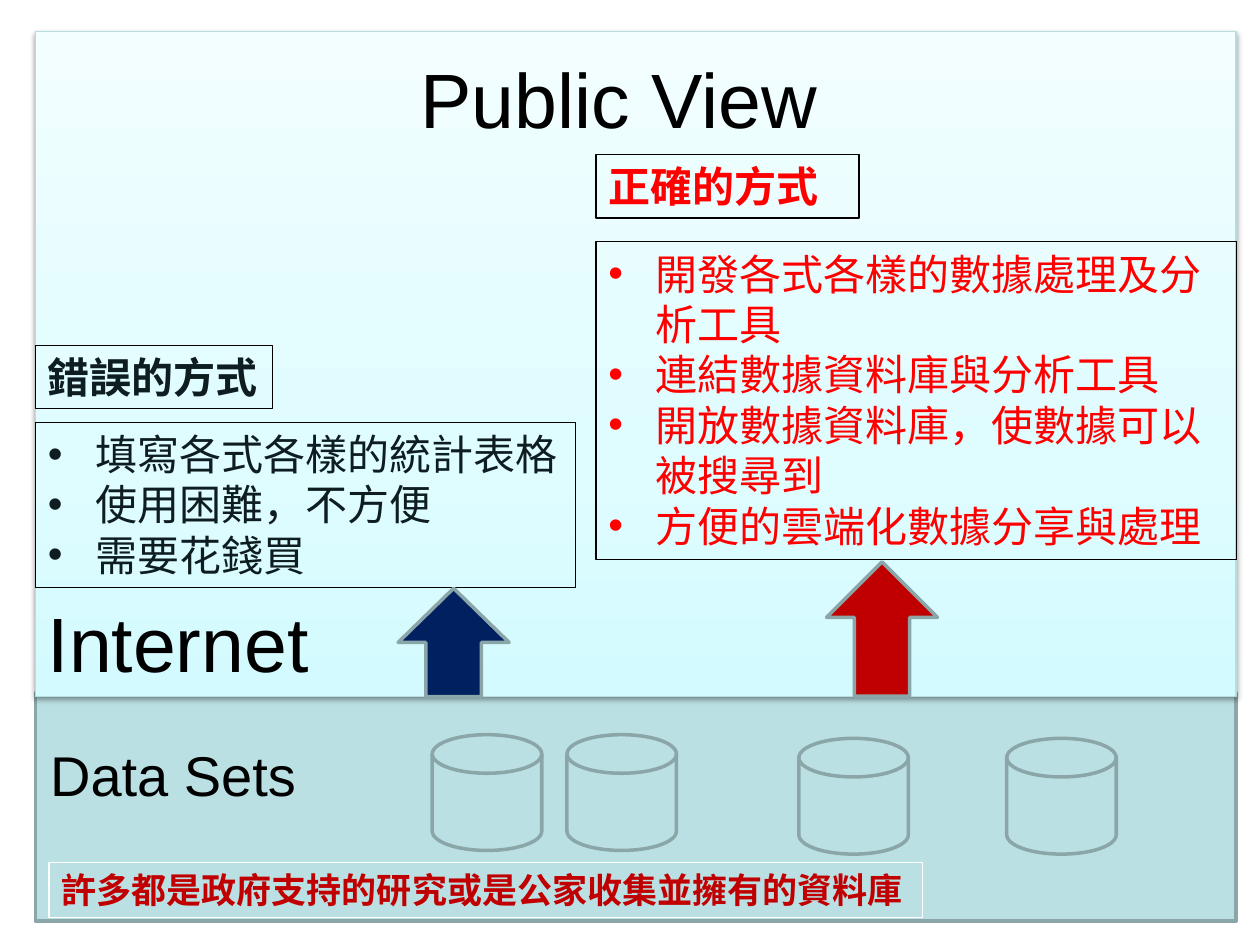
from lxml.etree import SubElement
from pptx import Presentation
from pptx.dml.color import RGBColor
from pptx.enum.shapes import MSO_SHAPE
from pptx.enum.text import MSO_AUTO_SIZE, PP_ALIGN
from pptx.oxml import parse_xml
from pptx.oxml.ns import nsdecls, qn
from pptx.util import Pt

LEFT, WIDTH = 20.2, 686.2
DISK_W, DISK_H = 62.6, 66.2
ARROW_W = 63.4
BORDER = "8AA6A8"
TEAL = "BBE0E3"
INK, RED, DARK_RED = "0E1E20", "FF0000", "C00000"

DATA_LAYER = (LEFT, 396, WIDTH, 130.3)
INTERNET_LAYER = (LEFT, 18, WIDTH, 380.2)
GRADIENT = [(0, "D3FBFF"), (35, "DFFCFF"), (100, "F2FEFF")]

LABELS = [
    ("Internet", (LEFT, 337, 170.6, 60.5), 44),
    ("Public View", (233.3, 25.9, 243.4, 60.5), 44),
    ("Data Sets", (21.6, 419.8, 156.2, 46.1), 32),
]
DISKS = [(247, 419.8), (324, 419.8), (456.5, 421.9), (575.3, 421.9)]
ARROWS = [
    ((227.5, 336.2, ARROW_W, 61.9), "002060"),
    ((472.3, 321.1, ARROW_W, 76.7), DARK_RED),
]
WRONG_WAYS = ["填寫各式各樣的統計表格", "使用困難，不方便", "需要花錢買"]
RIGHT_WAYS = [
    "開發各式各樣的數據處理及分析工具",
    "連結數據資料庫與分析工具",
    "開放數據資料庫，使數據可以被搜尋到",
    "方便的雲端化數據分享與處理",
]
HEADINGS = [
    (["錯誤的方式"], (LEFT, 197.3, 135.6, 36.3), 24, INK, "000000", False),
    (["正確的方式"], (340.6, 88.3, 150.3, 36.3), 24, RED, "000000", True),
    (["許多都是政府支持的研究或是公家收集並擁有的資料庫"],
     (28.1, 493, 499, 31.5), 20, DARK_RED, "FFFFFF", False),
]
LISTS = [
    (WRONG_WAYS, (LEFT, 241.3, 308.5, 94.3), 24, INK, "000000", False),
    (RIGHT_WAYS, (340.6, 138.2, 365.8, 181.5), 24, RED, "000000", True),
]


def color(value):
    return RGBColor.from_string(value)


def apply(target, values):
    for key, value in values.items():
        setattr(target, key, value)


def outline(shape, line_color, width):
    shape.line.color.rgb = color(line_color)
    shape.line.width = Pt(width)


def add_figure(slide, kind, place, fill, line_color=BORDER, width=2):
    figure = slide.shapes.add_shape(kind, *map(Pt, place))
    figure.shadow.inherit = False
    figure.fill.solid()
    figure.fill.fore_color.rgb = color(fill)
    outline(figure, line_color, width)
    return figure


def shade_layer(layer):
    stops = "".join(
        f'<a:gs pos="{pos * 1000}"><a:srgbClr val="{tint}"/></a:gs>'
        for pos, tint in GRADIENT)
    gradient = parse_xml(
        f'<a:gradFill {nsdecls("a")} rotWithShape="1"><a:gsLst>{stops}</a:gsLst>'
        '<a:lin ang="16200000" scaled="0"/></a:gradFill>')
    properties = layer.element.spPr
    properties.replace(properties.find(qn("a:solidFill")), gradient)
    shadow = SubElement(
        properties.find(qn("a:effectLst")), qn("a:outerShdw"),
        blurRad=str(Pt(3.1)), dist=str(Pt(1.6)), dir="5400000", rotWithShape="0")
    black = SubElement(shadow, qn("a:srgbClr"), val="000000")
    SubElement(black, qn("a:alpha"), val="38000")


def add_bullet(paragraph):
    properties = paragraph._p.get_or_add_pPr()
    properties.set("marL", str(Pt(27)))
    properties.set("indent", str(-Pt(27)))
    SubElement(properties, qn("a:buFont"), typeface="Arial")
    SubElement(properties, qn("a:buChar"), char="•")


def add_text(slide, lines, place, size, ink, border=None, wrap=False,
             bold=False, bulleted=False):
    box = slide.shapes.add_textbox(*map(Pt, place))
    frame = box.text_frame
    apply(frame, {"word_wrap": wrap, "auto_size": MSO_AUTO_SIZE.SHAPE_TO_FIT_TEXT})
    if border:
        outline(box, border, 0.75)
    frame.text = "\n".join(lines)
    for paragraph in frame.paragraphs:
        paragraph.alignment = PP_ALIGN.LEFT
        if bulleted:
            add_bullet(paragraph)
        font = paragraph.runs[0].font
        apply(font, {"name": "Arial", "size": Pt(size), "bold": bold})
        font.color.rgb = color(ink)


def main():
    deck = Presentation()
    apply(deck, {"slide_width": Pt(720), "slide_height": Pt(540)})
    slide = deck.slides.add_slide(deck.slide_layouts[6])

    add_figure(slide, MSO_SHAPE.RECTANGLE, DATA_LAYER, TEAL)
    shade_layer(add_figure(
        slide, MSO_SHAPE.RECTANGLE, INTERNET_LAYER, TEAL, "B6DCDF", 0.75))
    for label, place, size in LABELS:
        add_text(slide, [label], place, size, "000000")
    for left, top in DISKS:
        add_figure(slide, MSO_SHAPE.FLOWCHART_MAGNETIC_DISK,
                   (left, top, DISK_W, DISK_H), TEAL)
    for ways in LISTS:
        add_text(slide, *ways, bulleted=True)
    for heading in HEADINGS:
        add_text(slide, *heading, bold=True)
    for place, fill in ARROWS:
        add_figure(slide, MSO_SHAPE.UP_ARROW, place, fill)

    deck.save("out.pptx")


if __name__ == "__main__":
    main()
